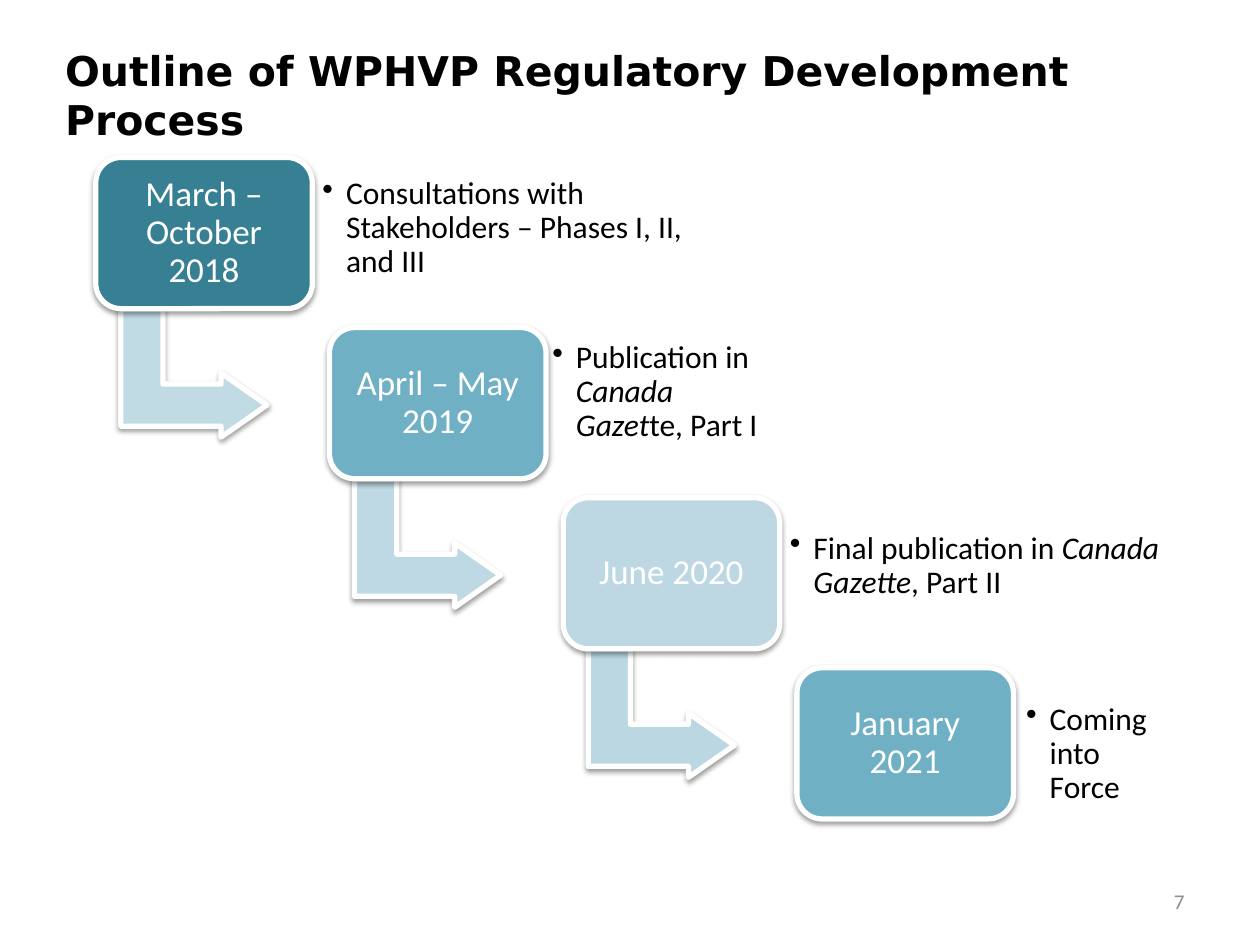
from lxml.etree import SubElement
from pptx import Presentation
from pptx.dml.color import RGBColor
from pptx.enum.shapes import MSO_SHAPE as Preset
from pptx.enum.text import MSO_ANCHOR as Anchor, MSO_AUTO_SIZE as AutoSize, PP_ALIGN as Align
from pptx.oxml.ns import qn
from pptx.util import Pt

WHITE, BLACK, GREY = "FFFFFF", "000000", "8C8C8C"
STEP_X, STEP_Y = 133.55, 97.2
CARD_WIDTH, CARD_HEIGHT = 123.8, 86.4
NOTE_HEIGHT = 69.8

# date, card fill, arrow fill, note box (dx, dy, width), note as (text, italic) spans
STAGES = [
    ("March – October 2018", "377F92", "C1DBE5", (124.6, 5.8, 219.6),
     [("Consultations with Stakeholders – Phases I, II, and III", False)]),
    ("April – May 2019", "70B0C5", "BED9E3", (122.4, 2.2, 139.7),
     [("Publication in ", False), ("Canada Gazet", True), ("te, Part I", False)]),
    ("June 2020", "BED8E3", "BAD7E2", (124.6, 4.3, 226.1),
     [("Final publication in ", False), ("Canada Gazette", True), (", Part II", False)]),
    ("January 2021", "70B0C5", None, (126, 14.4, 90),
     [("Coming into Force", False)]),
]


def color(value):
    return RGBColor.from_string(value)


def apply(target, **values):
    for name, value in values.items():
        setattr(target, name, value)


def write(shape, spans, size, ink, align=Align.LEFT, inset=None, spacing=1.0,
          font="Calibri", bold=False, bullet_indent=None):
    frame = shape.text_frame
    apply(frame, word_wrap=True, auto_size=AutoSize.NONE, vertical_anchor=Anchor.MIDDLE)
    if inset is not None:
        for side in ("left", "top", "right", "bottom"):
            setattr(frame, f"margin_{side}", Pt(inset))
    para = frame.paragraphs[0]
    if bullet_indent:
        props = para._p.get_or_add_pPr()
        props.set("marL", str(Pt(bullet_indent)))
        props.set("indent", str(-Pt(bullet_indent)))
        SubElement(props, qn("a:buChar"), char="•")
    apply(para, alignment=align, line_spacing=spacing)
    for text, italic in spans:
        span = para.add_run()
        span.text = text
        apply(span.font, name=font, size=Pt(size), bold=bold, italic=italic)
        span.font.color.rgb = color(ink)


def add_block(page, preset, box, fill, adjustments):
    """Filled shape with a white outline and a soft shadow below it."""
    block = page.shapes.add_shape(preset, *map(Pt, box))
    for index, value in enumerate(adjustments):
        block.adjustments[index] = value
    block.fill.solid()
    block.fill.fore_color.rgb = color(fill)
    block.line.color.rgb = color(WHITE)
    block.line.width = Pt(3)
    block.shadow.inherit = False
    effects = block._element.spPr.find(qn("a:effectLst"))
    shadow = SubElement(effects, qn("a:outerShdw"), blurRad=str(Pt(3.1)),
                        dist=str(Pt(1.6)), dir="5400000", rotWithShape="0")
    tint = SubElement(shadow, qn("a:srgbClr"), val=BLACK)
    SubElement(tint, qn("a:alpha"), val="38000")
    return block


def add_title(page, box, text):
    title = page.shapes.title
    left, top, width, height = map(Pt, box)
    apply(title, left=left, top=top, width=width, height=height)
    write(title, [(text, False)], 23.4, BLACK, font="DejaVu Sans", bold=True)


def add_stage(page, left, top, stage):
    date, card_fill, arrow_fill, (note_dx, note_dy, note_width), note_spans = stage
    # Arrow to the next stage, tucked under the card
    if arrow_fill:
        arrow = add_block(page, Preset.BENT_UP_ARROW, (left + 19.4, top + 81.4, 73.4, 83.5),
                          arrow_fill, (0.328, 0.25, 0.358))
        arrow.rotation = 90
    # Date card
    card = add_block(page, Preset.ROUNDED_RECTANGLE, (left, top, CARD_WIDTH, CARD_HEIGHT),
                     card_fill, (0.167,))
    write(card, [(date, False)], 20, WHITE, Align.CENTER, inset=5.8, spacing=0.9)
    # Bulleted note beside the card
    note = page.shapes.add_textbox(Pt(left + note_dx), Pt(top + note_dy),
                                   Pt(note_width), Pt(NOTE_HEIGHT))
    write(note, note_spans, 18, BLACK, inset=5, spacing=0.9, bullet_indent=13.5)


def add_staircase(page, left, top):
    for index, stage in enumerate(STAGES):
        add_stage(page, left + index * STEP_X, top + index * STEP_Y, stage)


def add_page_number(page, box, number):
    label = page.shapes.add_textbox(*map(Pt, box))
    write(label, [(number, False)], 12, GREY, Align.RIGHT)


def main():
    deck = Presentation()
    apply(deck, slide_width=Pt(720), slide_height=Pt(540))
    page = deck.slides.add_slide(deck.slide_layouts[5])
    add_title(page, (30, 21, 654, 66), "Outline of WPHVP Regulatory Development Process")
    add_staircase(page, 54.7, 90)
    add_page_number(page, (516, 500.5, 168, 28.75), "7")
    deck.save("out.pptx")


if __name__ == "__main__":
    main()
